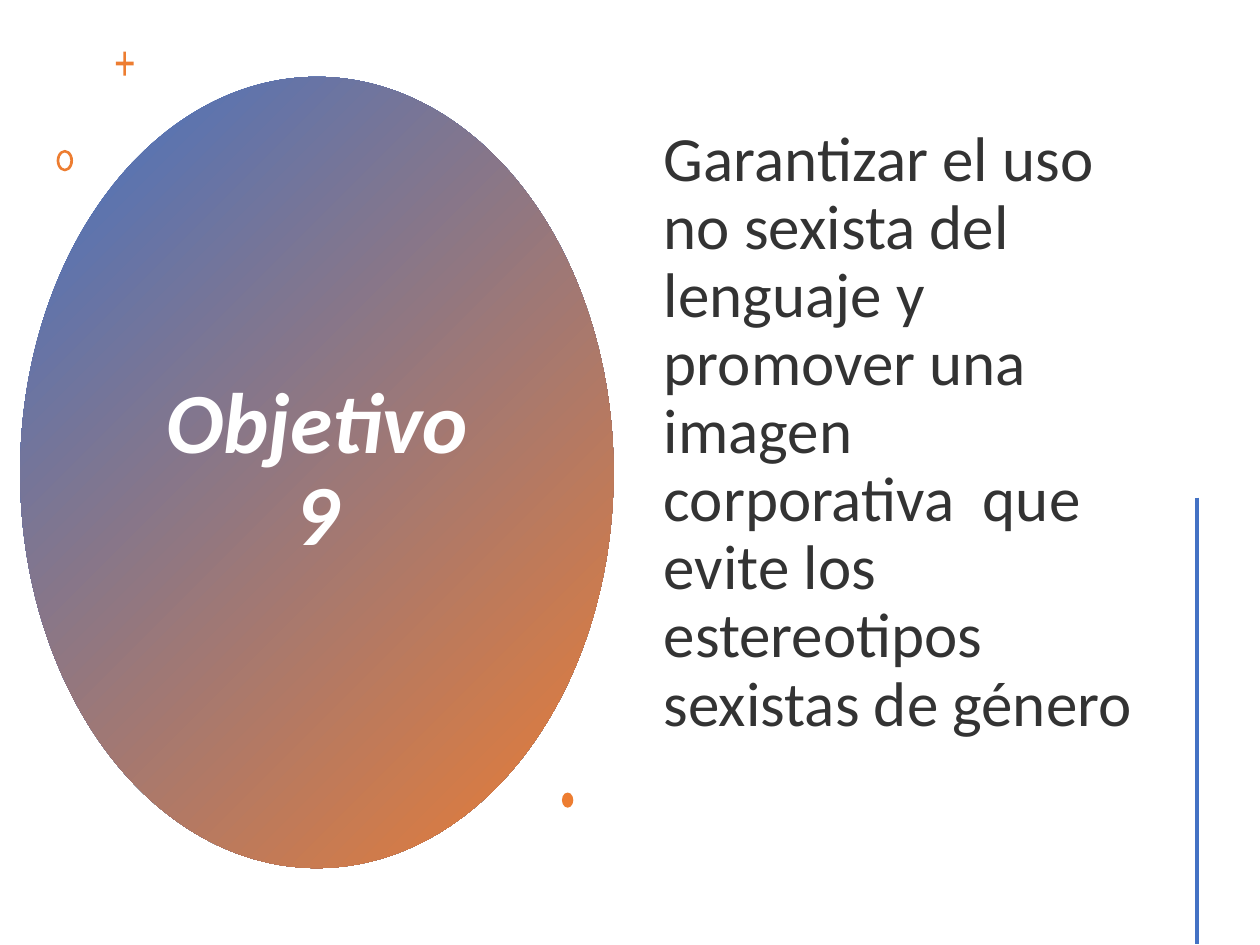
from lxml import etree
from pptx import Presentation
from pptx.dml.color import RGBColor
from pptx.enum import shapes, text
from pptx.oxml.ns import qn
from pptx.util import Inches, Pt

COLORS = {"blue": "4472C4", "orange": "ED7D31", "white": "FFFFFF", "body": "333333"}


def rgb(name):
    return RGBColor.from_string(COLORS[name])


def write(frame, wording, size, color, align, bold=False, italic=False, before=0):
    """Fill a text frame with one formatted, vertically centred paragraph."""
    frame.word_wrap = True
    frame.auto_size = text.MSO_AUTO_SIZE.NONE
    frame.vertical_anchor = text.MSO_ANCHOR.MIDDLE
    paragraph = frame.paragraphs[0]
    paragraph.alignment = align
    paragraph.line_spacing = 0.9
    paragraph.space_before = Pt(before)
    run = paragraph.add_run()
    run.text = wording
    run.font.name = "Calibri"
    run.font.size = Pt(size)
    run.font.bold = bold
    run.font.italic = italic
    run.font.color.rgb = rgb(color)


prs = Presentation()
prs.slide_width, prs.slide_height = Inches(10), Inches(7.5)
slide = prs.slides.add_slide(prs.slide_layouts[5])

# Gradient ellipse behind the title
ellipse = slide.shapes.add_shape(
    shapes.MSO_SHAPE.OVAL, Inches(0.16), Inches(0.61), Inches(4.71), Inches(6.28))
ellipse.shadow.inherit = False
ellipse.line.fill.background()
ellipse.fill.gradient()
ellipse.fill.gradient_angle = 315
for stop, color in zip(ellipse.fill.gradient_stops, ("blue", "orange")):
    stop.color.rgb = rgb(color)

heading = slide.shapes.title
heading.left, heading.top = Inches(1.02), Inches(1.41)
heading.width, heading.height = Inches(2.99), Inches(4.67)
write(heading.text_frame, "Objetivo 9", 49, "white", text.PP_ALIGN.CENTER,
      bold=True, italic=True)
heading.element.addprevious(ellipse.element)

objective = slide.shapes.add_textbox(
    Inches(5.17), Inches(0.57), Inches(3.91), Inches(6.38))
write(objective.text_frame,
      "Garantizar el uso no sexista del lenguaje y promover una imagen "
      "corporativa  que evite los estereotipos sexistas de género",
      36, "body", text.PP_ALIGN.LEFT, before=7.5)
objective.text_frame.margin_bottom = Inches(0.69)  # raises the centred text

# Small orange ornaments: plus, ring and dot
plus_points = [
    (0.98, 0.41), (1, 0.41), (1, 0.49), (1.06, 0.49), (1.06, 0.52), (1, 0.52),
    (1, 0.6), (0.98, 0.6), (0.98, 0.52), (0.92, 0.52), (0.92, 0.49), (0.98, 0.49)]
corners = [(Inches(x), Inches(y)) for x, y in plus_points]
builder = slide.shapes.build_freeform(*corners[0])
builder.add_line_segments(corners[1:], close=True)
plus = builder.convert_to_shape()
ring = slide.shapes.add_shape(
    shapes.MSO_SHAPE.DONUT, Inches(0.45), Inches(1.19), Inches(0.13), Inches(0.17))
ring.adjustments[0] = 0.16
dot = slide.shapes.add_shape(
    shapes.MSO_SHAPE.OVAL, Inches(4.46), Inches(6.29), Inches(0.09), Inches(0.12))
for ornament in (plus, ring, dot):
    ornament.shadow.inherit = False
    ornament.fill.solid()
    ornament.fill.fore_color.rgb = rgb("orange")
    ornament.line.fill.background()

side_rule = slide.shapes.add_connector(
    shapes.MSO_CONNECTOR.STRAIGHT, Inches(9.5), Inches(3.95), Inches(9.5), Inches(7.49))
side_rule.line.color.rgb = rgb("blue")
side_rule.line.width = Pt(2)
etree.SubElement(side_rule.element.spPr, qn("a:effectLst"))

prs.save("out.pptx")
